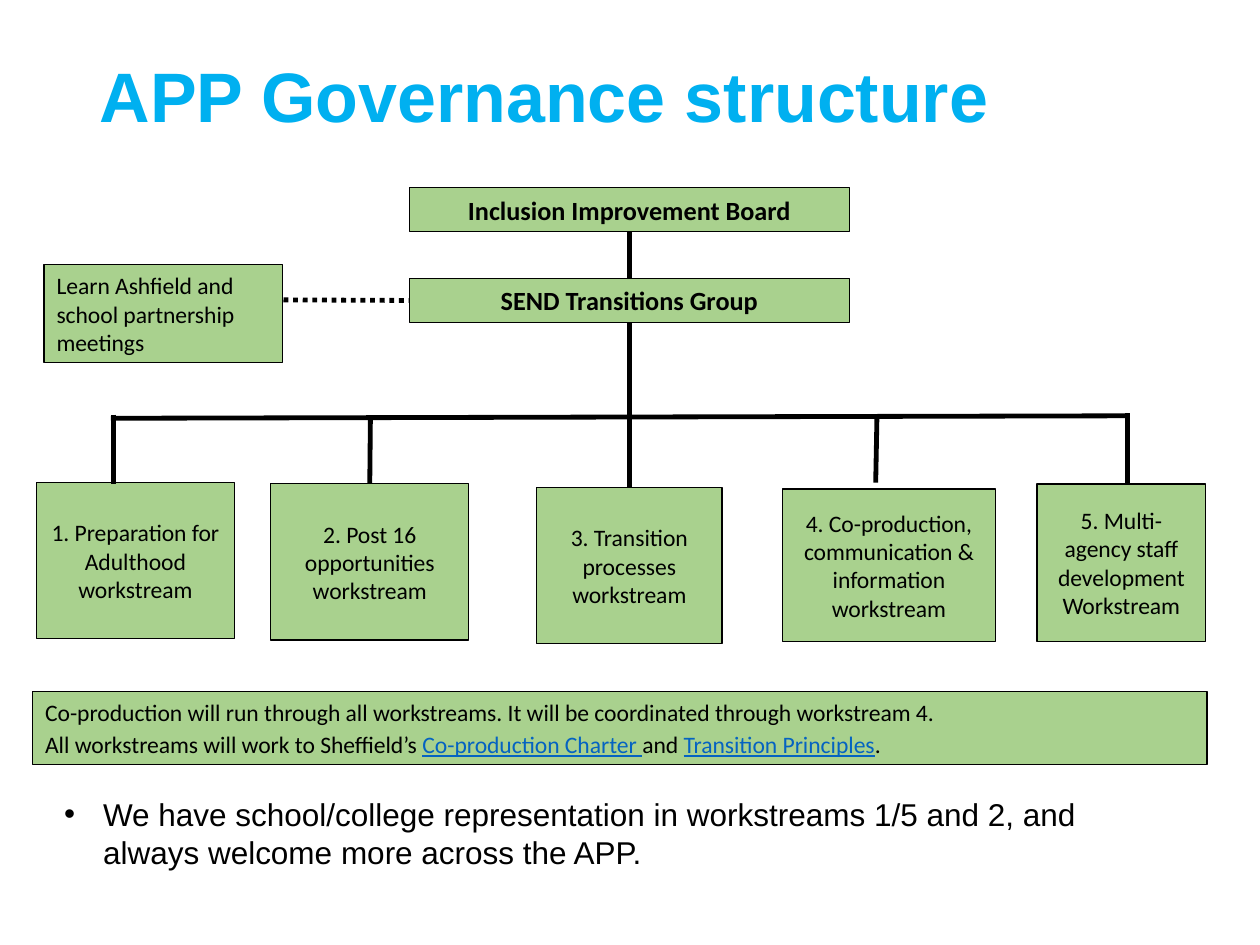
from dataclasses import dataclass

from lxml import etree
from pptx import Presentation
from pptx.dml.color import RGBColor
from pptx.enum import dml, shapes, text
from pptx.oxml import ns
from pptx.util import Inches, Pt


@dataclass(frozen=True)
class Theme:
    title_color: RGBColor = RGBColor(0x00, 0xB0, 0xF0)
    box_fill: RGBColor = RGBColor(0xA9, 0xD1, 0x8E)
    ink: RGBColor = RGBColor(0x00, 0x00, 0x00)
    link: RGBColor = RGBColor(0x05, 0x63, 0xC1)
    heading_font: str = "Arial"
    box_font: str = "Calibri"
    title_size: float = 40
    bullet_size: float = 18
    group_size: float = 15
    box_size: float = 13.5
    border: float = 0.75
    connector: float = 2.75


THEME = Theme()
TOP, LEFT, BOTTOM = 0, 1, 2
BUS_Y = 3.31

# Text, box (left, top, width, height)
WORKSTREAMS = [
    ("1. Preparation for Adulthood workstream", (0.29, 3.83, 1.57, 1.24)),
    ("2. Post 16 opportunities workstream", (2.15, 3.84, 1.57, 1.24)),
    ("3. Transition processes workstream", (4.26, 3.87, 1.47, 1.24)),
    ("4. Co-production, communication & information workstream", (6.21, 3.88, 1.69, 1.21)),
    ("5. Multi-agency staff development\nWorkstream", (8.23, 3.84, 1.34, 1.25)),
]

# Branches from the bus that end beside a box's midpoint: start, end
SIDE_BRANCHES = [
    ((0.9, 3.29), (0.9, 3.84)),
    ((6.96, BUS_Y), (6.95, 3.83)),
    ((8.95, 3.28), (8.95, 3.83)),
]

NOTE_LINES = [
    [("Co-production will run through all workstreams. "
      "It will be coordinated through workstream 4.", False)],
    [("All workstreams will work to Sheffield’s ", False),
     ("Co-production Charter ", True),
     ("and ", False),
     ("Transition Principles", True),
     (".", False)],
]


def style_font(font, name, size, color=THEME.ink, bold=False):
    font.name = name
    font.size = Pt(size)
    font.bold = bold
    font.color.rgb = color


def add_title(slide, title_text):
    title = slide.shapes.title
    title.left, title.top, title.width, title.height = map(Inches, (0.69, 0.4, 8.62, 0.78))
    frame = title.text_frame
    frame.text = title_text
    frame.vertical_anchor = text.MSO_ANCHOR.MIDDLE
    paragraph = frame.paragraphs[0]
    paragraph.alignment = text.PP_ALIGN.LEFT
    paragraph.line_spacing = 0.9
    style_font(paragraph.runs[0].font, THEME.heading_font, THEME.title_size,
               THEME.title_color, bold=True)


def add_box(slide, box, box_text="", size=THEME.box_size, bold=False,
            alignment=text.PP_ALIGN.CENTER):
    shape = slide.shapes.add_shape(shapes.MSO_SHAPE.RECTANGLE, *map(Inches, box))
    shape.shadow.inherit = False
    shape.fill.solid()
    shape.fill.fore_color.rgb = THEME.box_fill
    shape.line.color.rgb = THEME.ink
    shape.line.width = Pt(THEME.border)
    frame = shape.text_frame
    frame.word_wrap = True
    frame.vertical_anchor = text.MSO_ANCHOR.MIDDLE
    frame.text = box_text
    for paragraph in frame.paragraphs:
        paragraph.alignment = alignment
        for run in paragraph.runs:
            style_font(run.font, THEME.box_font, size, bold=bold)
    return shape


def add_line(slide, start, end, begin=None, finish=None, dotted=False):
    """Draw a line; begin and finish are optional (shape, side) joins."""
    line = slide.shapes.add_connector(
        shapes.MSO_CONNECTOR.STRAIGHT, *map(Inches, (*start, *end)))
    line.line.color.rgb = THEME.ink
    line.line.width = Pt(THEME.connector)
    if dotted:
        line.line.dash_style = dml.MSO_LINE.ROUND_DOT
    etree.SubElement(line._element.spPr, ns.qn("a:effectLst"))
    if begin:
        line.begin_connect(*begin)
    if finish:
        line.end_connect(*finish)


def add_note(slide):
    shape = add_box(slide, (0.26, 5.49, 9.32, 0.58))
    frame = shape.text_frame
    frame.add_paragraph()
    for paragraph, pieces in zip(frame.paragraphs, NOTE_LINES):
        paragraph.alignment = text.PP_ALIGN.LEFT
        for piece, linked in pieces:
            run = paragraph.add_run()
            run.text = piece
            style_font(run.font, THEME.box_font, THEME.box_size,
                       THEME.link if linked else THEME.ink)
            run.font.underline = linked
    frame.paragraphs[1].space_before = Pt(2)


def add_bullet(slide, bullet_text):
    shape = slide.shapes.add_textbox(*map(Inches, (0.41, 6.26, 8.85, 0.94)))
    frame = shape.text_frame
    frame.word_wrap = True
    frame.text = bullet_text
    paragraph = frame.paragraphs[0]
    properties = paragraph._p.get_or_add_pPr()
    properties.set("marL", str(Inches(0.31)))
    properties.set("indent", str(-Inches(0.31)))
    etree.SubElement(properties, ns.qn("a:buFont"), typeface=THEME.heading_font)
    etree.SubElement(properties, ns.qn("a:buChar"), char="•")
    style_font(paragraph.runs[0].font, THEME.heading_font, THEME.bullet_size)


def main():
    presentation = Presentation()
    presentation.slide_width = Inches(10)
    presentation.slide_height = Inches(7.5)
    slide = presentation.slides.add_slide(presentation.slide_layouts[5])
    add_title(slide, "APP Governance structure")

    board, group = [
        add_box(slide, (3.25, top, 3.49, 0.35), name, THEME.group_size, bold=True)
        for name, top in (("Inclusion Improvement Board", 1.49),
                          ("SEND Transitions Group", 2.21))
    ]
    add_box(slide, (0.29 + 0.06, 2.1, 1.89, 0.78),
            "Learn Ashfield and school partnership meetings",
            alignment=text.PP_ALIGN.LEFT)
    streams = [add_box(slide, box, name) for name, box in WORKSTREAMS]

    add_line(slide, (5, 1.84), (5, 2.21), (board, BOTTOM), (group, TOP))
    add_line(slide, (2.25, 2.38), (3.25, 2.38), finish=(group, LEFT), dotted=True)
    add_line(slide, (5, 2.56), (5, 3.87), (group, BOTTOM), (streams[2], TOP))
    add_line(slide, (0.88, 3.32), (8.93, 3.3))
    add_line(slide, (2.94, BUS_Y), (2.94, 3.84), finish=(streams[1], TOP))
    for start, end in SIDE_BRANCHES:
        add_line(slide, start, end)

    add_note(slide)
    add_bullet(slide, "We have school/college representation in workstreams 1/5 and 2, "
                      "and always welcome more across the APP.")
    presentation.save("out.pptx")


if __name__ == "__main__":
    main()
